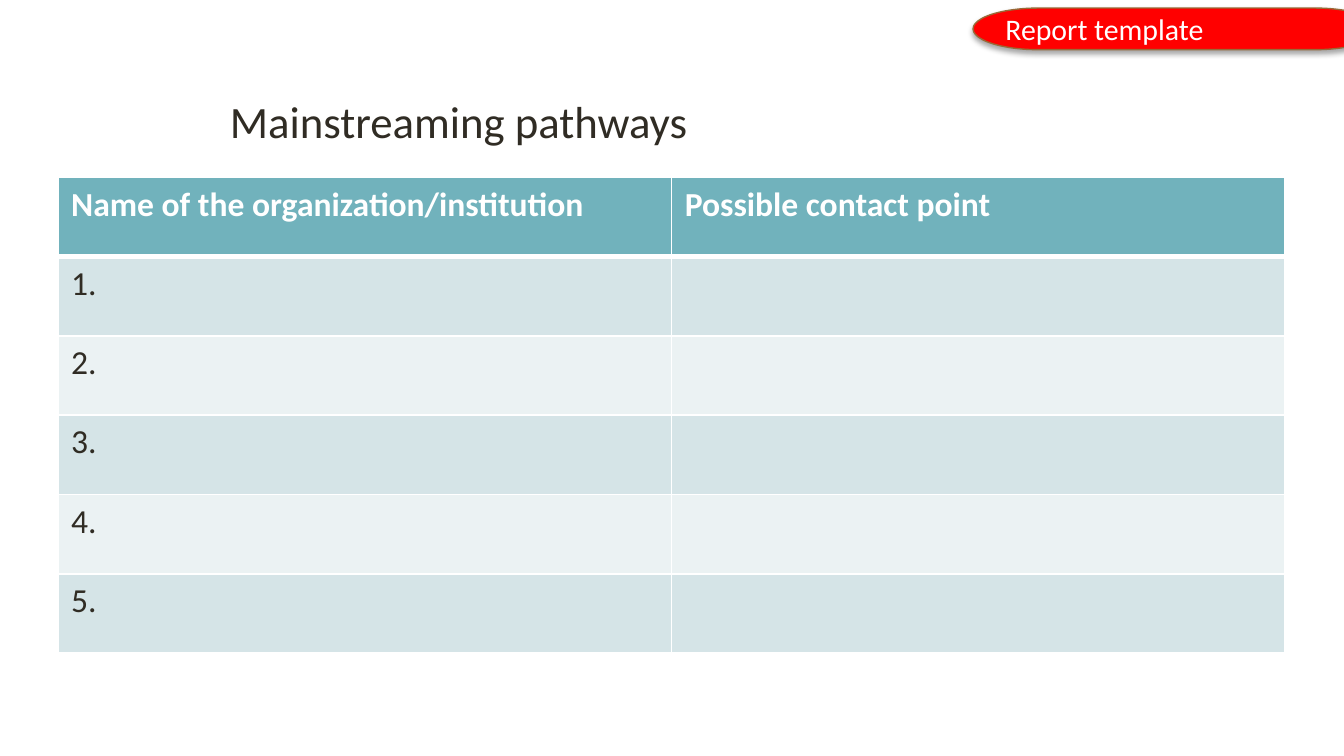
from lxml.etree import SubElement
from pptx import Presentation
from pptx.dml.color import RGBColor
from pptx.enum.shapes import MSO_SHAPE
from pptx.enum.text import MSO_ANCHOR, PP_ALIGN
from pptx.oxml import parse_xml
from pptx.oxml.ns import nsdecls, qn
from pptx.util import Inches, Pt

COLORS = {"ink": "302C24", "white": "FFFFFF", "header": "71B2BC",
          "odd": "D5E4E7", "even": "EBF2F3", "red": "FF0000", "brown": "996937"}


def write(frame, text, color, **formats):
    paragraph = frame.paragraphs[0]
    paragraph.alignment = PP_ALIGN.LEFT
    run = paragraph.add_run()
    run.text = text
    run.font.color.rgb = RGBColor.from_string(COLORS[color])
    for name, value in {"name": "Calibri", **formats}.items():
        setattr(run.font, name, value)


def add_border(cell, edge, points):
    line = SubElement(cell._tc.get_or_add_tcPr(), qn(f"a:{edge}"), w=str(Pt(points)))
    fill = SubElement(line, qn("a:solidFill"))
    SubElement(fill, qn("a:srgbClr"), val=COLORS["white"])


# Widescreen slide, 16:9
prs = Presentation()
prs.slide_width = Inches(10)
prs.slide_height = Inches(10 * 9 / 16)
slide = prs.slides.add_slide(prs.slide_layouts[5])

# Title
title = slide.shapes.title
title.left, title.top = Inches(1.61), Inches(0.69)
title.width, title.height = Inches(7.62), Inches(0.63)
title.text_frame.vertical_anchor = MSO_ANCHOR.TOP
title.text_frame.paragraphs[0].line_spacing = 0.9
write(title.text_frame, "Mainstreaming pathways", "ink", size=Pt(24))

# Pathways table: a header and numbered rows to fill in
rows = [("Name of the organization/institution", "Possible contact point")]
rows += [(f"{number}.", "") for number in range(1, 6)]
pathways = slide.shapes.add_table(len(rows), 2, Inches(0.43), Inches(1.32),
                                  Inches(9.13), Inches(3.54)).table
for r, texts in enumerate(rows):
    is_header = r == 0
    band = "header" if is_header else "odd" if r % 2 else "even"
    for c, text in enumerate(texts):
        cell = pathways.cell(r, c)
        borders = {"lnL": 1, "lnR": 1, "lnT": 3 if r == 1 else 1, "lnB": 3 if is_header else 1}
        for edge, points in borders.items():
            add_border(cell, edge, points)
        cell.fill.solid()
        cell.fill.fore_color.rgb = RGBColor.from_string(COLORS[band])
        if text:
            write(cell.text_frame, text, "white" if is_header else "ink",
                  size=Pt(18), bold=is_header)

# Report tag, running off the right edge
tag = slide.shapes.add_shape(MSO_SHAPE.FLOWCHART_TERMINATOR, Inches(7.24), Inches(0.06),
                             Inches(3.03), Inches(0.31))
tag.fill.solid()
tag.fill.fore_color.rgb = RGBColor.from_string(COLORS["red"])
tag.line.color.rgb = RGBColor.from_string(COLORS["brown"])
tag.line.width = Pt(0.75)
tag.shadow.inherit = False
tag._element.spPr.find(qn("a:effectLst")).append(parse_xml(
    f'<a:outerShdw {nsdecls("a")} blurRad="{Pt(3.1)}" dist="{Pt(1.8)}" dir="5400000" '
    'rotWithShape="0"><a:srgbClr val="000000"><a:alpha val="35000"/></a:srgbClr></a:outerShdw>'))
tag.text_frame.vertical_anchor = MSO_ANCHOR.MIDDLE
write(tag.text_frame, "Report template", "white", size=Pt(16))

prs.save("out.pptx")
